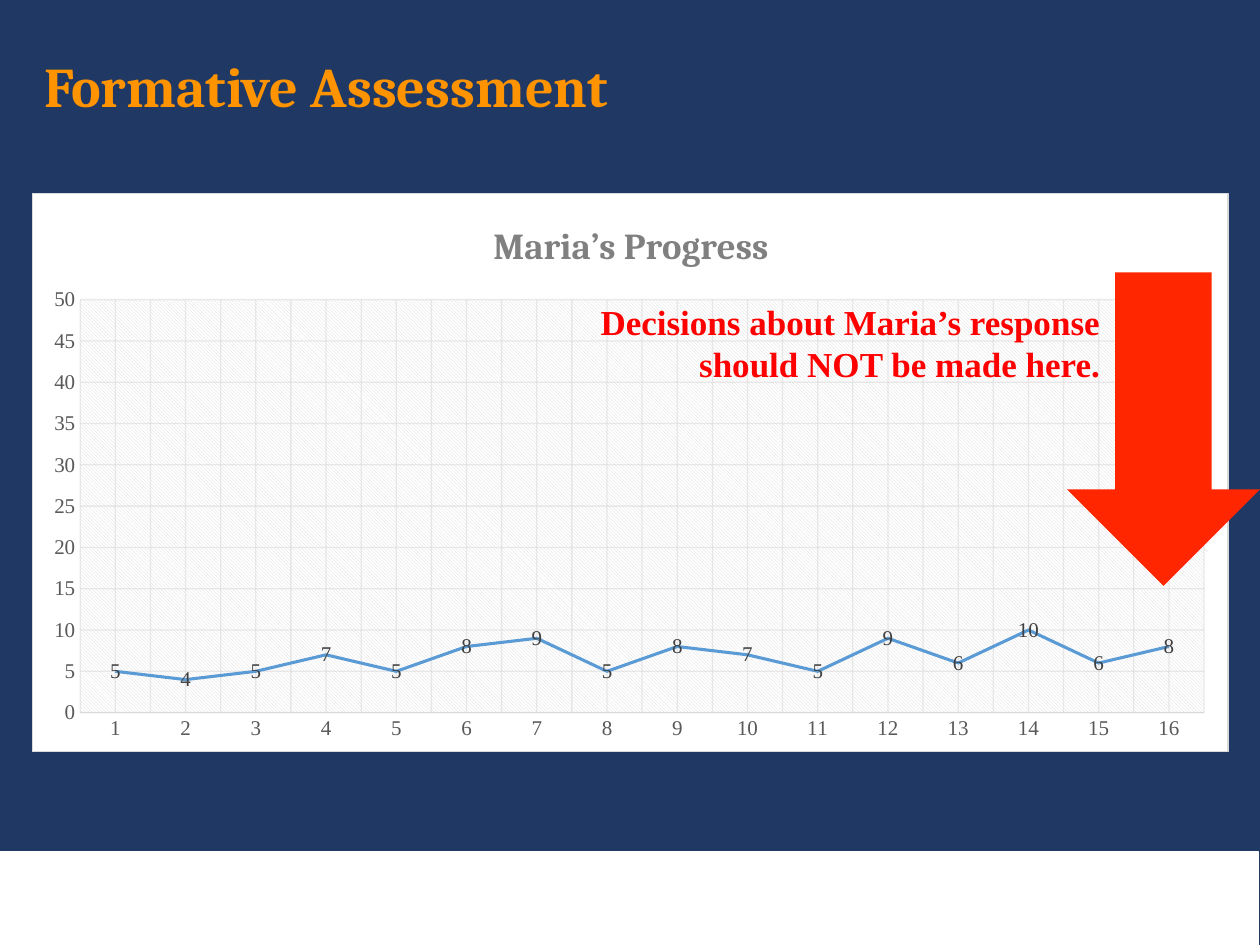
import copy

import pptx
import pptx.chart.data
import pptx.dml.color
import pptx.enum.chart
import pptx.enum.shapes
import pptx.enum.text
import pptx.oxml
import pptx.oxml.ns
import pptx.util
from pptx.util import Cm

RGBColor = pptx.dml.color.RGBColor
NAVY = RGBColor(0x20, 0x38, 0x64)
WHITE = RGBColor(0xFF, 0xFF, 0xFF)
ORANGE = RGBColor(0xFF, 0x93, 0x00)
ARROW_RED = RGBColor(0xFF, 0x26, 0x00)
TEXT_RED = RGBColor(0xFF, 0x00, 0x00)
BLACK = RGBColor(0x00, 0x00, 0x00)
GRID_GRAY = RGBColor(0xD9, 0xD9, 0xD9)
AXIS_GRAY = RGBColor(0x59, 0x59, 0x59)
LABEL_GRAY = RGBColor(0x40, 0x40, 0x40)
TITLE_GRAY = RGBColor(0x80, 0x80, 0x80)
LINE_BLUE = RGBColor(0x5B, 0x9B, 0xD5)
HEADING_FONT = "Cambria"
BODY_FONT = "Times New Roman"
SCORES = (5, 4, 5, 7, 5, 8, 9, 5, 8, 7, 5, 9, 6, 10, 6, 8)
NAMESPACES = pptx.oxml.ns.nsdecls("c", "a")


def set_font(font, name, size, color, bold=False):
    font.name = name
    font.size = pptx.util.Pt(size)
    font.color.rgb = color
    font.bold = bold


def set_line(line, color, width):
    line.color.rgb = color
    line.width = pptx.util.Pt(width)


def add_block(slide, kind, box, fill, line_color=None):
    shape = slide.shapes.add_shape(kind, *box)
    shape.shadow.inherit = False
    shape.fill.solid()
    shape.fill.fore_color.rgb = fill
    if line_color is None:
        shape.line.fill.background()
    else:
        set_line(shape.line, line_color, 1)


def add_text(slide, box, text, font_name, size, color, alignment, anchor):
    text_box = slide.shapes.add_textbox(*box)
    frame = text_box.text_frame
    frame.word_wrap = True
    frame.vertical_anchor = anchor
    paragraph = frame.paragraphs[0]
    paragraph.alignment = alignment
    run = paragraph.add_run()
    run.text = text
    set_font(run.font, font_name, size, color, bold=True)
    return paragraph


def make_layout(**fractions):
    """Return a manual layout in fractions of the chart area."""
    target = '<c:layoutTarget val="inner"/>' if "w" in fractions else ""
    modes = '<c:xMode val="edge"/><c:yMode val="edge"/>'
    values = "".join(f'<c:{key} val="{value}"/>' for key, value in fractions.items())
    return pptx.oxml.parse_xml(
        f"<c:layout {NAMESPACES}><c:manualLayout>{target}{modes}{values}"
        "</c:manualLayout></c:layout>")


def find_child(parent, tag):
    return parent.find(pptx.oxml.ns.qn(tag))


def remove_children(parent, tag):
    for child in parent.findall(pptx.oxml.ns.qn(tag)):
        parent.remove(child)


def style_axis(axis):
    axis.major_tick_mark = pptx.enum.chart.XL_TICK_MARK.NONE
    axis.minor_tick_mark = pptx.enum.chart.XL_TICK_MARK.NONE
    axis.has_major_gridlines = True
    set_line(axis.major_gridlines.format.line, GRID_GRAY, 0.75)
    gridlines = find_child(axis._element, "c:majorGridlines")
    for color in gridlines.iter(pptx.oxml.ns.qn("a:srgbClr")):
        color.append(pptx.oxml.parse_xml(f'<a:alpha {NAMESPACES} val="54000"/>'))
    set_font(axis.tick_labels.font, BODY_FONT, 12, AXIS_GRAY)


def add_minor_gridlines(axis):
    """Add minor gridlines that look like the major ones."""
    axis.has_minor_gridlines = True
    major = find_child(axis._element, "c:majorGridlines")
    minor = find_child(axis._element, "c:minorGridlines")
    minor.append(copy.deepcopy(find_child(major, "c:spPr")))


def add_chart_title(chart):
    chart.has_title = True
    run = chart.chart_title.text_frame.paragraphs[0].add_run()
    run.text = "Maria’s Progress"
    set_font(run.font, HEADING_FONT, 21, TITLE_GRAY, bold=True)
    title = find_child(find_child(chart._chartSpace, "c:chart"), "c:title")
    remove_children(title, "c:layout")
    find_child(title, "c:tx").addnext(make_layout(x=0.38, y=0.04))


def fill_chart_areas(chart):
    """Give the chart area a white fill and the plot area a hatch."""
    chart_element = find_child(chart._chartSpace, "c:chart")
    chart_element.addnext(pptx.oxml.parse_xml(
        f'<c:spPr {NAMESPACES}><a:solidFill><a:srgbClr val="{WHITE}"/></a:solidFill>'
        f'<a:ln w="9525"><a:solidFill><a:srgbClr val="{GRID_GRAY}"/></a:solidFill></a:ln>'
        "</c:spPr>"))
    plot_area = find_child(chart_element, "c:plotArea")
    remove_children(plot_area, "c:layout")
    plot_area.insert(0, make_layout(x=0.04, y=0.19, w=0.94, h=0.74))
    plot_area.append(pptx.oxml.parse_xml(
        f'<c:spPr {NAMESPACES}><a:pattFill prst="ltDnDiag">'
        f'<a:fgClr><a:srgbClr val="{GRID_GRAY}"/></a:fgClr>'
        f'<a:bgClr><a:srgbClr val="{WHITE}"/></a:bgClr>'
        "</a:pattFill><a:ln><a:noFill/></a:ln></c:spPr>"))


def add_progress_chart(slide, box):
    data = pptx.chart.data.CategoryChartData()
    data.categories = [str(number) for number in range(1, len(SCORES) + 1)]
    data.add_series("Series 1", SCORES)
    chart = slide.shapes.add_chart(
        pptx.enum.chart.XL_CHART_TYPE.LINE, *box, data).chart
    chart.has_legend = False
    set_font(chart.font, BODY_FONT, 10, BLACK)
    add_chart_title(chart)

    style_axis(chart.category_axis)
    add_minor_gridlines(chart.category_axis)
    set_line(chart.category_axis.format.line, GRID_GRAY, 0.75)
    style_axis(chart.value_axis)
    chart.value_axis.minimum_scale = 0
    chart.value_axis.maximum_scale = 50
    chart.value_axis.major_unit = 5
    chart.value_axis.format.line.fill.background()

    plot = chart.plots[0]
    plot.vary_by_categories = False
    series = plot.series[0]
    series.smooth = False
    set_line(series.format.line, LINE_BLUE, 1.75)
    labels = series.data_labels
    labels.show_value = True
    labels.position = pptx.enum.chart.XL_LABEL_POSITION.CENTER
    set_font(labels.font, BODY_FONT, 12, LABEL_GRAY)
    fill_chart_areas(chart)


def main():
    presentation = pptx.Presentation()
    presentation.slide_width = Cm(25.4)
    presentation.slide_height = Cm(19.05)
    slide = presentation.slides.add_slide(presentation.slide_layouts[6])
    slide.background.fill.solid()
    slide.background.fill.fore_color.rgb = NAVY

    shapes = pptx.enum.shapes.MSO_SHAPE
    alignments = pptx.enum.text.PP_ALIGN
    anchors = pptx.enum.text.MSO_ANCHOR
    add_block(slide, shapes.RECTANGLE,
              (Cm(0), Cm(17.17), Cm(25.37), Cm(1.88)), WHITE, WHITE)
    heading = add_text(slide, (Cm(0.64), Cm(0.64), Cm(24.13), Cm(2.03)),
                       "Formative Assessment", HEADING_FONT, 32, ORANGE,
                       alignments.LEFT, anchors.MIDDLE)
    heading.line_spacing = 1.1
    add_progress_chart(slide, (Cm(0.64), Cm(3.89), Cm(24.13), Cm(11.28)))
    add_block(slide, shapes.DOWN_ARROW,
              (Cm(21.51), Cm(5.49), Cm(3.89), Cm(6.32)), ARROW_RED)
    add_text(slide, (Cm(11.46), Cm(5.94), Cm(10.97), Cm(1.96)),
             "Decisions about Maria’s response should NOT be made here.",
             BODY_FONT, 20, TEXT_RED, alignments.RIGHT, anchors.TOP)
    presentation.save("out.pptx")


if __name__ == "__main__":
    main()
